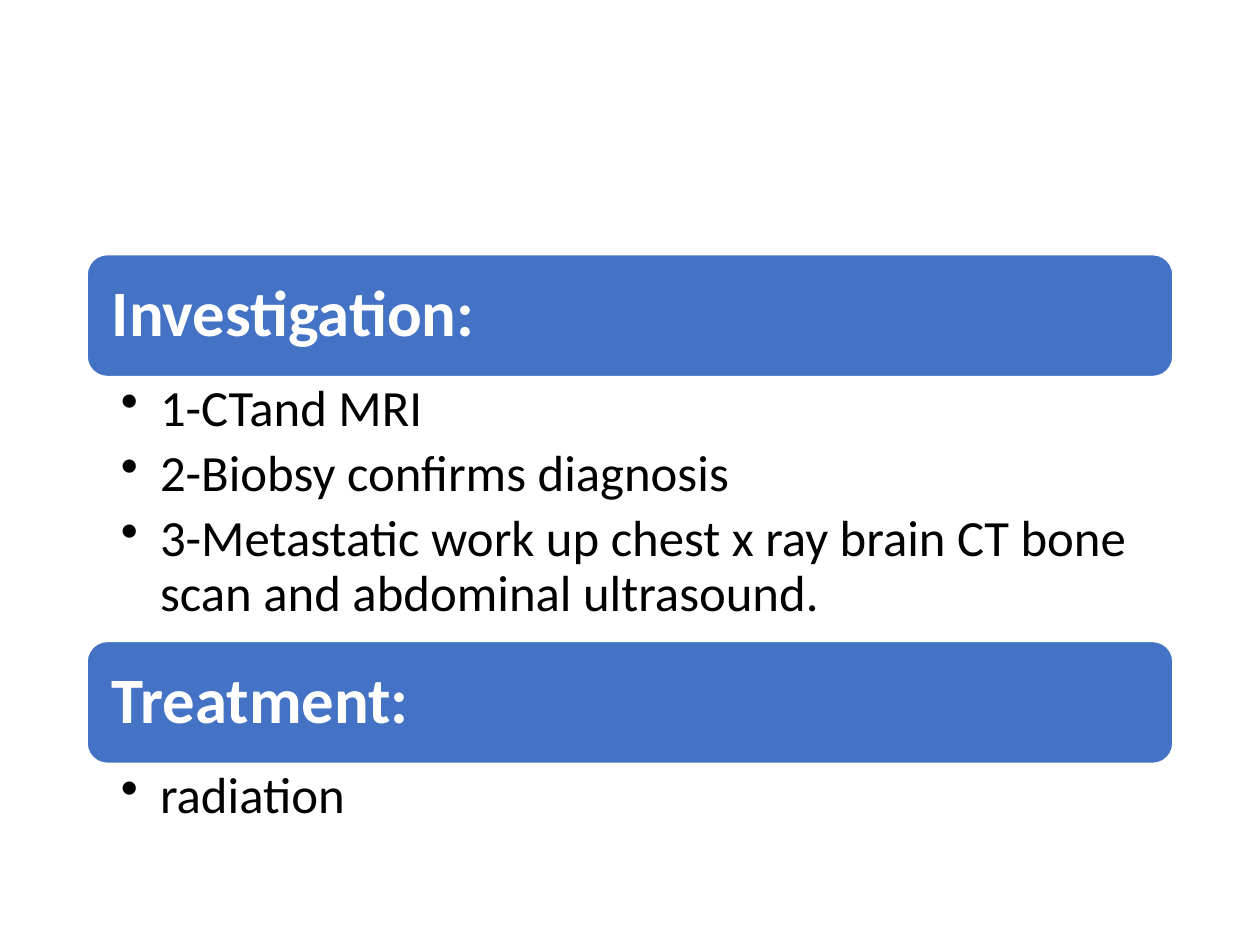
from dataclasses import dataclass

from lxml import etree
from pptx import Presentation
from pptx.dml.color import RGBColor
from pptx.enum import shapes, text
from pptx.oxml import ns
from pptx.util import Inches, Pt

LEFT, WIDTH, BAR = 0.69, 8.62, 0.97
INDENT = 0.31
HEAD = {"size": Pt(37), "name": "Calibri", "bold": True}
ITEM = {"size": Pt(29), "name": "Calibri", "bold": False}


@dataclass
class Part:
    head: str
    items: list[str]
    top: float
    depth: float


PARTS = [
    Part("Investigation:", [
        "1-CTand MRI",
        "2-Biobsy confirms diagnosis",
        "3-Metastatic work up chest x ray brain CT bone scan and abdominal ultrasound.",
    ], 2.02, 2.09),
    Part("Treatment:", ["radiation"], 5.09, 0.67),
]


def color(code: str) -> RGBColor:
    return RGBColor.from_string(code)


def set_frame(frame, anchor, left: float, top: float, right: float, low: float) -> None:
    values = {
        "word_wrap": True, "vertical_anchor": anchor,
        "margin_left": Inches(left), "margin_top": Inches(top),
        "margin_right": Inches(right), "margin_bottom": Inches(low),
    }
    for name, value in values.items():
        setattr(frame, name, value)


def write(para, words: str, style: dict, code: str) -> None:
    para.alignment = text.PP_ALIGN.LEFT
    para.line_spacing = 0.9
    run = para.add_run()
    run.text = words
    for name, value in style.items():
        setattr(run.font, name, value)
    run.font.color.rgb = color(code)


def add_bullet(para) -> None:
    props = para._p.get_or_add_pPr()
    props.set("marL", str(Inches(INDENT)))
    props.set("indent", str(-Inches(INDENT)))
    etree.SubElement(props, ns.qn("a:buChar"), char="•")


def draw_bar(slide, part: Part) -> None:
    bar = slide.shapes.add_shape(
        shapes.MSO_SHAPE.ROUNDED_RECTANGLE,
        Inches(LEFT), Inches(part.top), Inches(WIDTH), Inches(BAR))
    bar.shadow.inherit = False
    bar.fill.solid()
    bar.fill.fore_color.rgb = color("4472C4")
    bar.line.color.rgb = color("FFFFFF")
    bar.line.width = Pt(1)
    set_frame(bar.text_frame, text.MSO_ANCHOR.MIDDLE, 0.15, 0.15, 0.15, 0.15)
    write(bar.text_frame.paragraphs[0], part.head, HEAD, "FFFFFF")


def draw_list(slide, part: Part) -> None:
    box = slide.shapes.add_textbox(
        Inches(LEFT), Inches(part.top + BAR), Inches(WIDTH), Inches(part.depth))
    frame = box.text_frame
    set_frame(frame, text.MSO_ANCHOR.TOP, 0.27, 0.05, 0.29, 0.05)
    for index, item in enumerate(part.items):
        para = frame.add_paragraph() if index else frame.paragraphs[0]
        para.level = 1
        para.space_after = Pt(5.8)
        write(para, item, ITEM, "000000")
        add_bullet(para)


def main() -> None:
    deck = Presentation()
    deck.slide_width, deck.slide_height = Inches(10), Inches(7.5)
    slide = deck.slides.add_slide(deck.slide_layouts[6])
    for part in PARTS:
        draw_bar(slide, part)
        draw_list(slide, part)
    deck.save("out.pptx")


if __name__ == "__main__":
    main()
